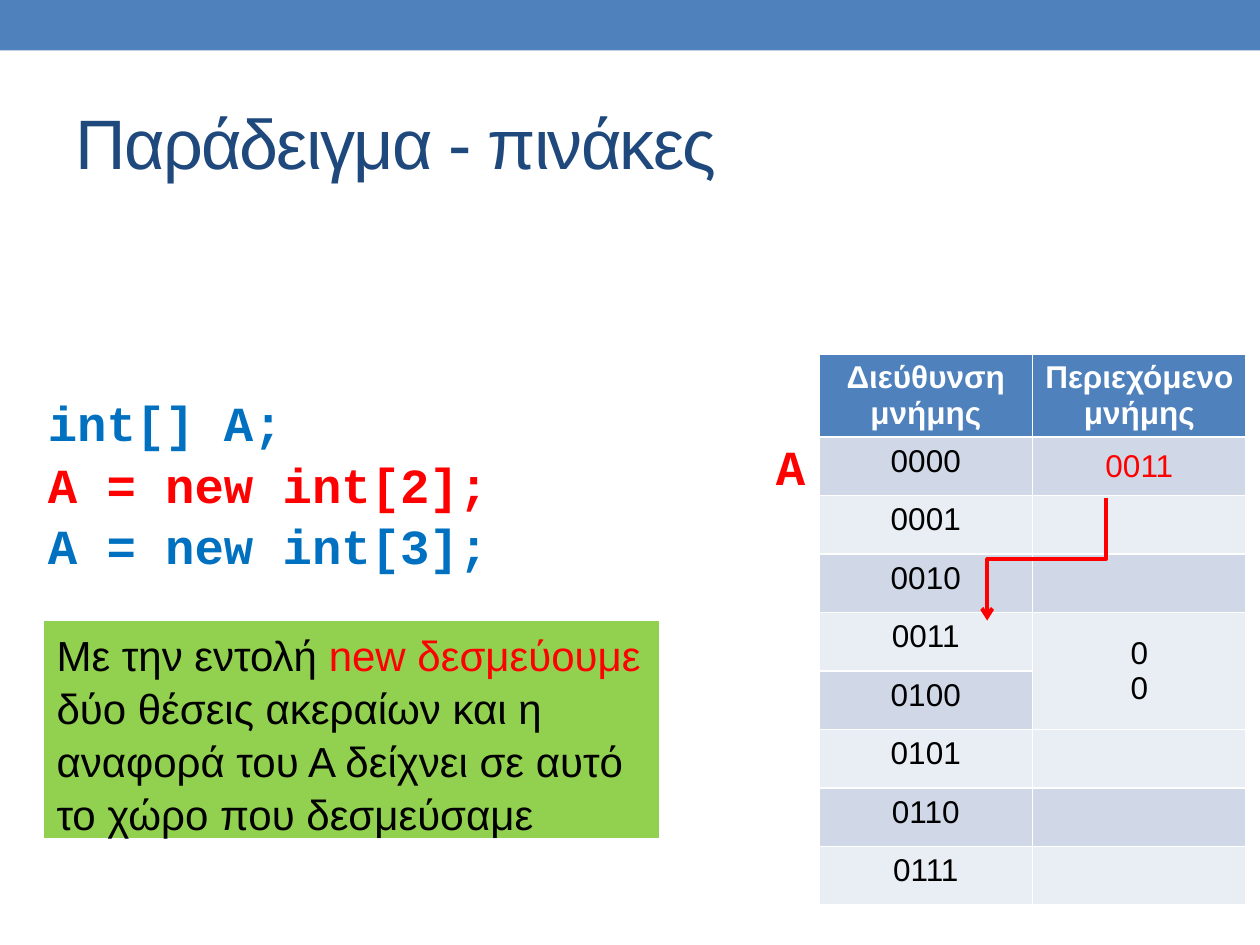
from dataclasses import dataclass
from pptx import Presentation, util as u
from pptx.dml.color import RGBColor
from pptx.enum import shapes as es, text as et
from pptx.oxml.ns import qn
from lxml import etree

HUES = {
    "bar": "4F81BD", "title": "1F497D", "code": "0070C0", "red": "FF0000",
    "black": "000000", "white": "FFFFFF", "note": "92D050",
    "dark": "D0D8E8", "light": "E9EDF4",
}
ARIAL, MONO = "Arial", "Courier New"


@dataclass
class Run:
    text: str
    hue: str
    size: int
    face: str = ARIAL
    bold: bool = False


@dataclass
class Box:
    left: float
    top: float
    width: float
    height: float

    def place(self) -> tuple:
        return tuple(u.Inches(v) for v in (self.left, self.top, self.width, self.height))


def rgb(hue: str) -> RGBColor:
    return RGBColor.from_string(HUES[hue])


def apply(obj, form: dict) -> None:
    for name, value in form.items():
        setattr(obj, name, value)


def write(para, runs: list[Run], **form) -> None:
    for item in runs:
        run = para.add_run()
        run.text = item.text
        apply(run.font, {"name": item.face, "size": u.Pt(item.size), "bold": item.bold})
        run.font.color.rgb = rgb(item.hue)
    apply(para, form)


def move(shape, box: Box) -> None:
    apply(shape, dict(zip(("left", "top", "width", "height"), box.place())))


def block(slide, box: Box, hue: str):
    shape = slide.shapes.add_shape(es.MSO_SHAPE.RECTANGLE, *box.place())
    shape.shadow.inherit = False
    shape.fill.solid()
    shape.fill.fore_color.rgb = rgb(hue)
    shape.line.fill.background()
    return shape


def head(slide) -> None:
    title = slide.shapes.title
    move(title, Box(0.5, 0.58, 9, 1.08))
    apply(title.text_frame, {"vertical_anchor": et.MSO_ANCHOR.MIDDLE,
                             "auto_size": et.MSO_AUTO_SIZE.NONE})
    para = title.text_frame.paragraphs[0]
    write(para, [Run("Παράδειγμα - πινάκες", "title", 40)], alignment=et.PP_ALIGN.LEFT)
    para.runs[0].font._element.set("spc", "-100")


def code(slide) -> None:
    body = slide.placeholders[1]
    move(body, Box(0.28, 3.04, 5.51, 1.46))
    frame = body.text_frame
    frame.auto_size = et.MSO_AUTO_SIZE.NONE
    lines = [("int[] A;", "code"), ("A = new int[2];", "red"), ("A = new int[3];", "code")]
    for i, (line, hue) in enumerate(lines):
        para = frame.add_paragraph() if i else frame.paragraphs[0]
        write(para, [Run(line, hue, 28, MONO, True)],
              line_spacing=1.05, space_before=u.Pt(0 if i else 5.6))
        props = para._p.get_or_add_pPr()
        for name in ("marL", "indent"):
            props.set(name, "0")
        etree.SubElement(props, qn("a:buNone"))


def fill(cell, runs: list[Run], hue: str, mid: bool = False) -> None:
    cell.fill.solid()
    cell.fill.fore_color.rgb = rgb(hue)
    if mid:
        cell.vertical_anchor = et.MSO_ANCHOR.MIDDLE
    for i, run in enumerate(runs):
        para = cell.text_frame.add_paragraph() if i else cell.text_frame.paragraphs[0]
        write(para, [run], alignment=et.PP_ALIGN.CENTER)


def memory(slide) -> None:
    count, box = 9, Box(6.5, 2.81, 3.39, 4.18)
    table = slide.shapes.add_table(count, 2, *box.place()).table
    for row in table.rows:
        row.height = u.Inches(box.height / count)
    for col, name in enumerate(("Διεύθυνση μνήμης", "Περιεχόμενο μνήμης")):
        cell = table.cell(0, col)
        apply(cell, {"margin_left": u.Inches(0.05), "margin_right": u.Inches(0.05)})
        fill(cell, [Run(name, "white", 18, bold=True)], "bar")
    held = {1: [Run("0011", "red", 18)], 4: [Run("0", "black", 18)] * 2}
    table.cell(4, 1).merge(table.cell(5, 1))
    for row in range(1, count):
        hue = "dark" if row % 2 else "light"
        fill(table.cell(row, 0), [Run(f"{row - 1:04b}", "black", 18)], hue)
        fill(table.cell(row, 1), held.get(row, []), hue, row in held)


def label(slide) -> None:
    frame = slide.shapes.add_textbox(*Box(6.06, 3.39, 0.44, 0.57).place()).text_frame
    frame.word_wrap = False
    write(frame.paragraphs[0], [Run("A", "red", 28, MONO, True)], line_spacing=1.05)


def arrow(slide) -> None:
    ends = [u.Inches(v) for v in (7.82, 3.97, 8.79, 4.91)]
    link = slide.shapes.add_connector(es.MSO_CONNECTOR.ELBOW, *ends)
    link.line.color.rgb = rgb("red")
    link.line.width = u.Pt(2.25)
    props = link._element.spPr
    props.find(qn("a:xfrm")).set("rot", "5400000")
    etree.SubElement(props.find(qn("a:ln")), qn("a:tailEnd")).set("type", "arrow")
    etree.SubElement(props, qn("a:effectLst"))


def note(slide) -> None:
    frame = block(slide, Box(0.35, 4.93, 4.88, 1.72), "note").text_frame
    apply(frame, {"word_wrap": True, "vertical_anchor": et.MSO_ANCHOR.TOP})
    parts = [
        ("Με την εντολή ", "black"),
        ("new δεσμεύουμε ", "red"),
        ("δύο θέσεις ακεραίων και η αναφορά του Α δείχνει σε αυτό το χώρο που δεσμεύσαμε",
         "black"),
    ]
    write(frame.paragraphs[0], [Run(part, hue, 24) for part, hue in parts],
          alignment=et.PP_ALIGN.LEFT, line_spacing=1.05)


def main() -> None:
    deck = Presentation()
    apply(deck, {"slide_width": u.Inches(10), "slide_height": u.Inches(7.5)})
    slide = deck.slides.add_slide(deck.slide_layouts[1])
    block(slide, Box(0, 0, 10, 0.4), "bar")
    for draw in (head, code, memory, label, arrow, note):
        draw(slide)
    deck.save("out.pptx")


if __name__ == "__main__":
    main()
